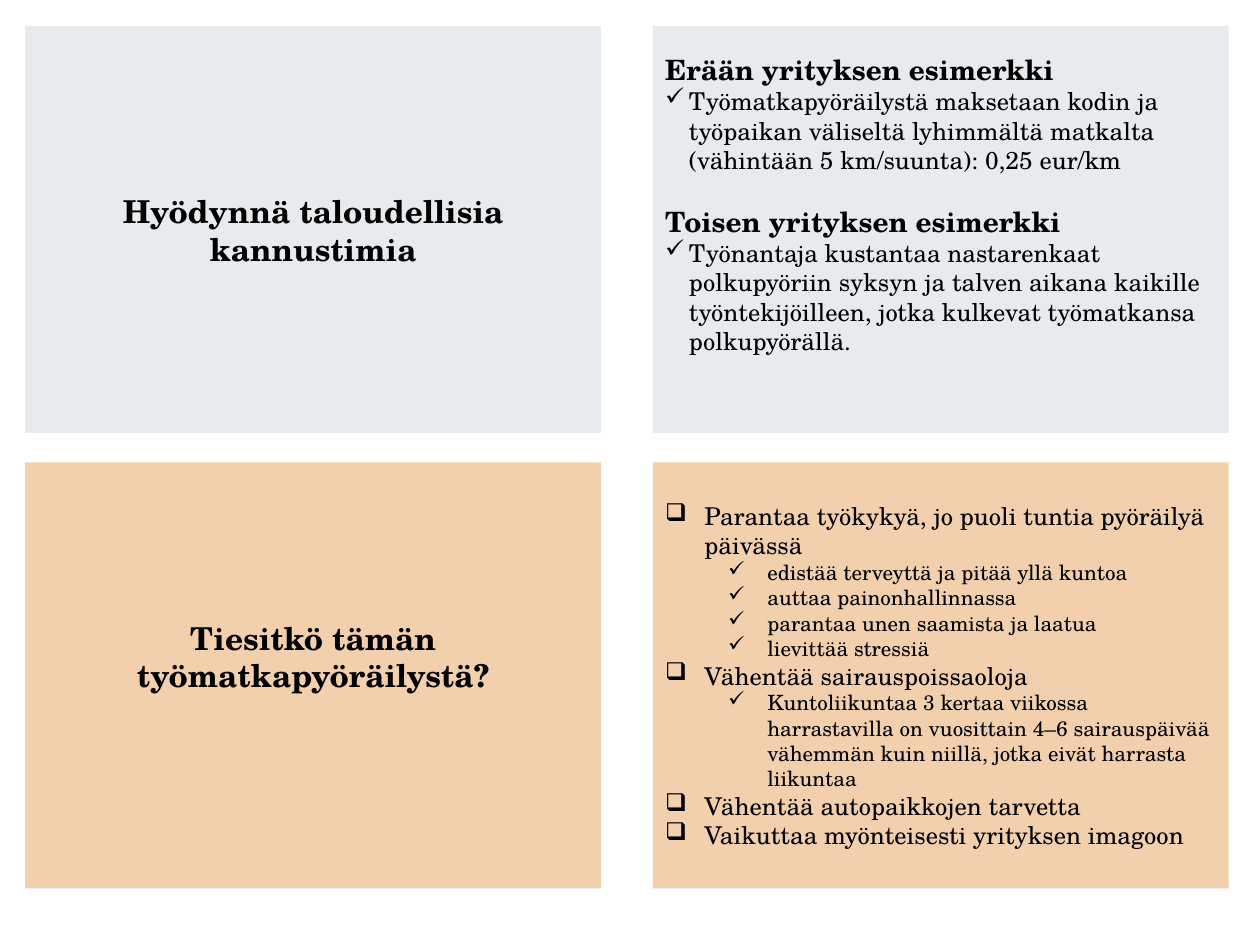
from lxml import etree
from pptx import Presentation
from pptx.dml.color import RGBColor
from pptx.enum.shapes import MSO_SHAPE
from pptx.enum.text import MSO_ANCHOR, PP_ALIGN
from pptx.oxml.ns import qn
from pptx.util import Cm, Pt

RECTANGLE = MSO_SHAPE.RECTANGLE
MIDDLE = MSO_ANCHOR.MIDDLE
LEFT, CENTER = PP_ALIGN.LEFT, PP_ALIGN.CENTER

FONT = "TeX Gyre Schola"
BLACK, GREY, ORANGE = "000000", "E7EBEE", "F2D0AD"
CHECK, BOX = "✓", "❑"

# Grid of two columns and two rows, in cm
COLUMNS = (0.51, 13.16)
CARD_WIDTH = 11.61
ROWS = ((0.53, 8.2), (9.32, 8.59))  # top, height
INSET = 0.13


def color(hex_string):
    return RGBColor.from_string(hex_string)


def write(paragraph, text, size=14, bold=False, align=LEFT, before=0,
          bullet=None, margin=0, hanging=0, level=0):
    paragraph.alignment = align
    paragraph.level = level
    if before:
        paragraph.space_before = Pt(before)
    if bullet:
        properties = paragraph._p.get_or_add_pPr()
        properties.set("marL", str(Cm(margin)))
        properties.set("indent", str(-Cm(hanging)))
        etree.SubElement(properties, qn("a:buChar")).set("char", bullet)
    run = paragraph.add_run()
    run.text = text
    run.font.name = FONT
    run.font.size = Pt(size)
    run.font.bold = bold
    run.font.color.rgb = color(BLACK)


class CardSheet:
    def __init__(self, slide):
        self.slide = slide

    def card(self, column, row, fill, paragraphs, lift=0):
        """Add a card; lift is extra room kept free below its text."""
        top, height = ROWS[row]
        card = self.slide.shapes.add_shape(
            RECTANGLE, Cm(COLUMNS[column]), Cm(top), Cm(CARD_WIDTH), Cm(height))
        card.shadow.inherit = False
        card.fill.solid()
        card.fill.fore_color.rgb = color(fill)
        card.line.fill.background()
        frame = card.text_frame
        frame.word_wrap = True
        frame.vertical_anchor = MIDDLE
        frame.margin_bottom = Cm(INSET + lift)
        for index, (text, style) in enumerate(paragraphs):
            paragraph = frame.add_paragraph() if index else frame.paragraphs[0]
            write(paragraph, text, **style)


def main():
    presentation = Presentation()
    presentation.slide_width, presentation.slide_height = Cm(25.4), Cm(19.05)
    sheet = CardSheet(presentation.slides.add_slide(presentation.slide_layouts[6]))

    title = dict(size=18, bold=True, align=CENTER)
    heading = dict(size=16, bold=True)
    example = dict(bullet=CHECK, margin=0.48, hanging=0.48)
    benefit = dict(bullet=BOX, margin=0.79, hanging=0.79)
    detail = dict(size=12, bullet=CHECK, margin=2.06, hanging=0.79, level=1)

    # Financial incentives
    sheet.card(0, 0, GREY, [("Hyödynnä taloudellisia kannustimia", title)])
    sheet.card(1, 0, GREY, [
        ("Erään yrityksen esimerkki", heading),
        ("Työmatkapyöräilystä maksetaan kodin ja työpaikan väliseltä "
         "lyhimmältä matkalta (vähintään 5 km/suunta): 0,25 eur/km", example),
        ("Toisen yrityksen esimerkki", dict(heading, before=17)),
        ("Työnantaja kustantaa nastarenkaat polkupyöriin syksyn ja talven "
         "aikana kaikille työntekijöilleen, jotka kulkevat työmatkansa "
         "polkupyörällä.", example),
    ], lift=1.02)

    # Benefits of cycling to work
    sheet.card(1, 1, ORANGE, [
        ("Parantaa työkykyä, jo puoli tuntia pyöräilyä päivässä", benefit),
        ("edistää terveyttä ja pitää yllä kuntoa", detail),
        ("auttaa painonhallinnassa", detail),
        ("parantaa unen saamista ja laatua", detail),
        ("lievittää stressiä", detail),
        ("Vähentää sairauspoissaoloja", benefit),
        ("Kuntoliikuntaa 3 kertaa viikossa harrastavilla on vuosittain 4–6 "
         "sairauspäivää vähemmän kuin niillä, jotka eivät harrasta liikuntaa",
         detail),
        ("Vähentää autopaikkojen tarvetta", benefit),
        ("Vaikuttaa myönteisesti yrityksen imagoon", benefit),
    ])
    sheet.card(0, 1, ORANGE, [("Tiesitkö tämän työmatkapyöräilystä?", title)],
               lift=0.76)

    presentation.save("out.pptx")


if __name__ == "__main__":
    main()
